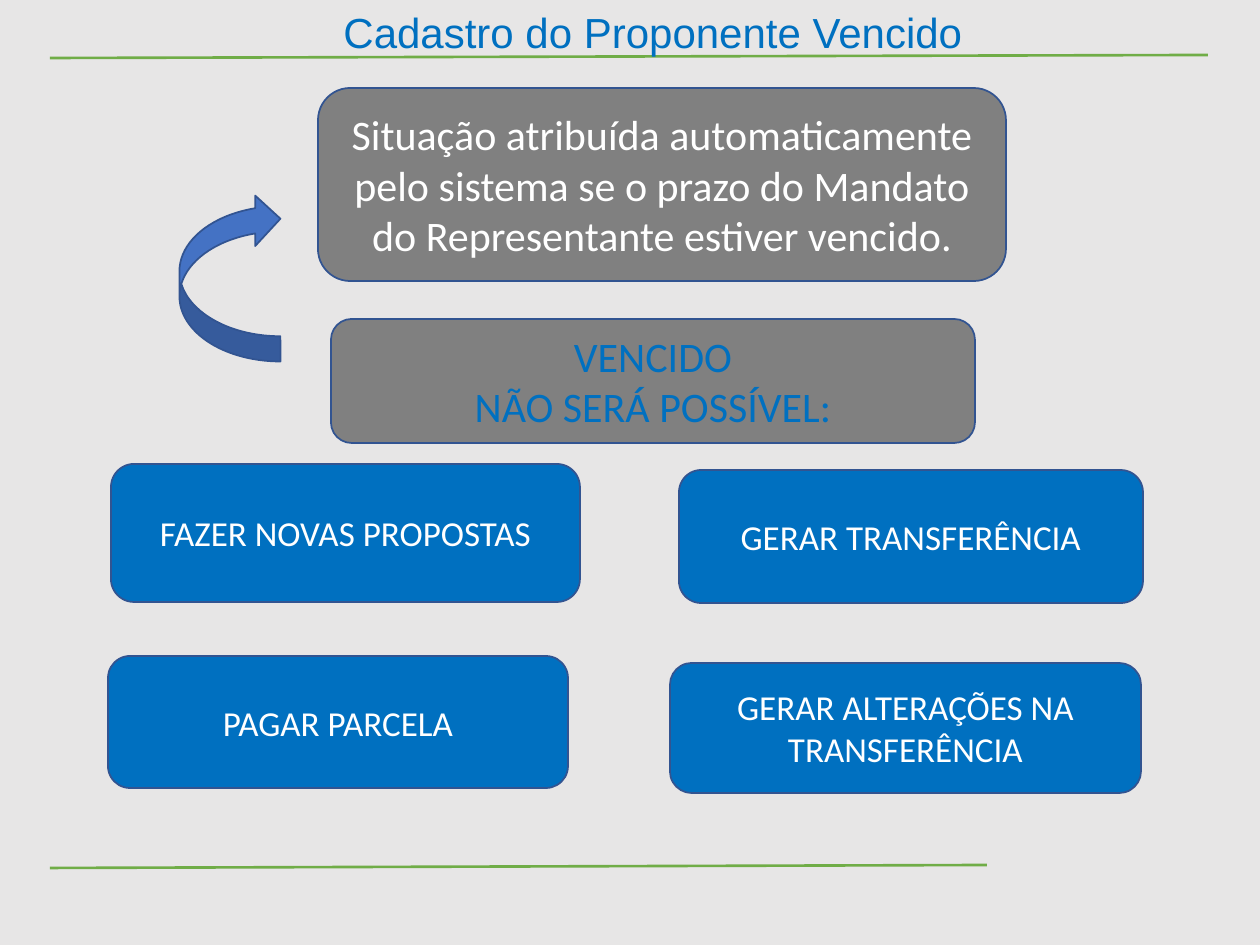
from lxml.etree import SubElement
from pptx import Presentation
from pptx.dml.color import RGBColor
from pptx.enum.shapes import MSO_CONNECTOR, MSO_SHAPE
from pptx.enum.text import MSO_ANCHOR, MSO_AUTO_SIZE, PP_ALIGN
from pptx.oxml.ns import qn
from pptx.util import Emu, Pt

PX_PER_INCH = 126
BACKGROUND = RGBColor(0xE7, 0xE6, 0xE6)
GREEN = RGBColor(0x70, 0xAD, 0x47)
BLUE = RGBColor(0x00, 0x70, 0xC0)
ARROW_BLUE = RGBColor(0x44, 0x72, 0xC4)
OUTLINE = RGBColor(0x32, 0x54, 0x91)
GRAY = RGBColor(0x80, 0x80, 0x80)
WHITE = RGBColor(0xFF, 0xFF, 0xFF)

TITLE_FONT = {"name": "Arial", "size": Pt(24)}
NOTICE_FONT = {"name": "Calibri", "size": Pt(24)}
ACTION_FONT = {"name": "Calibri", "size": Pt(20)}

RULES = [(50, 58, 1208, 55), (50, 868, 987, 865)]
ACTIONS = [
    ("FAZER NOVAS PROPOSTAS", (111, 464, 469, 138)),
    ("GERAR TRANSFERÊNCIA", (679, 470, 464, 133)),
    ("PAGAR PARCELA", (108, 656, 460, 132)),
    ("GERAR ALTERAÇÕES NA TRANSFERÊNCIA", (670, 663, 471, 130)),
]
STATUS = ["VENCIDO", "NÃO SERÁ POSSÍVEL:"]
EXPLANATION = [
    "Situação atribuída automaticamente pelo sistema se o prazo do Mandato "
    "do Representante estiver vencido."
]


def px(value):
    return Emu(round(value * 914400 / PX_PER_INCH))


def set_attrs(target, values):
    for name, value in values.items():
        setattr(target, name, value)


def write_text(tf, lines, font, color, align):
    for i, line in enumerate(lines):
        p = tf.paragraphs[0] if i == 0 else tf.add_paragraph()
        p.alignment = align
        r = p.add_run()
        r.text = line
        set_attrs(r.font, font)
        r.font.color.rgb = color


def add_rule(s, ends):
    line = s.shapes.add_connector(MSO_CONNECTOR.STRAIGHT, *map(px, ends))
    line.line.color.rgb = GREEN
    line.line.width = Pt(1.5)
    SubElement(line._element.spPr, qn("a:effectLst"))


def add_title(s, text, box):
    tf = s.shapes.add_textbox(*map(px, box)).text_frame
    set_attrs(tf, {"word_wrap": False, "auto_size": MSO_AUTO_SIZE.SHAPE_TO_FIT_TEXT})
    write_text(tf, [text], TITLE_FONT, BLUE, PP_ALIGN.LEFT)


def add_outlined(s, kind, box, fill):
    sp = s.shapes.add_shape(kind, *map(px, box))
    sp.shadow.inherit = False
    sp.fill.solid()
    sp.fill.fore_color.rgb = fill
    sp.line.color.rgb = OUTLINE
    sp.line.width = Pt(1)
    return sp


def add_card(s, lines, box, fill, font, color):
    tf = add_outlined(s, MSO_SHAPE.ROUNDED_RECTANGLE, box, fill).text_frame
    set_attrs(tf, {"word_wrap": True, "vertical_anchor": MSO_ANCHOR.MIDDLE})
    write_text(tf, lines, font, color, PP_ALIGN.CENTER)


def main():
    prs = Presentation()
    set_attrs(prs, {"slide_width": px(1260), "slide_height": px(945)})
    s = prs.slides.add_slide(prs.slide_layouts[6])
    s.background.fill.solid()
    s.background.fill.fore_color.rgb = BACKGROUND

    for ends in RULES:
        add_rule(s, ends)
    add_title(s, "Cadastro do Proponente Vencido", (331, 0, 651, 63))
    for text, box in ACTIONS:
        add_card(s, [text], box, BLUE, ACTION_FONT, WHITE)
    add_card(s, STATUS, (331, 319, 644, 124), GRAY, NOTICE_FONT, BLUE)
    add_card(s, EXPLANATION, (318, 88, 688, 193), GRAY, NOTICE_FONT, WHITE)
    arrow = add_outlined(s, MSO_SHAPE.CURVED_DOWN_ARROW, (146, 227, 168, 101), ARROW_BLUE)
    arrow.rotation = 270

    prs.save("out.pptx")


if __name__ == "__main__":
    main()
